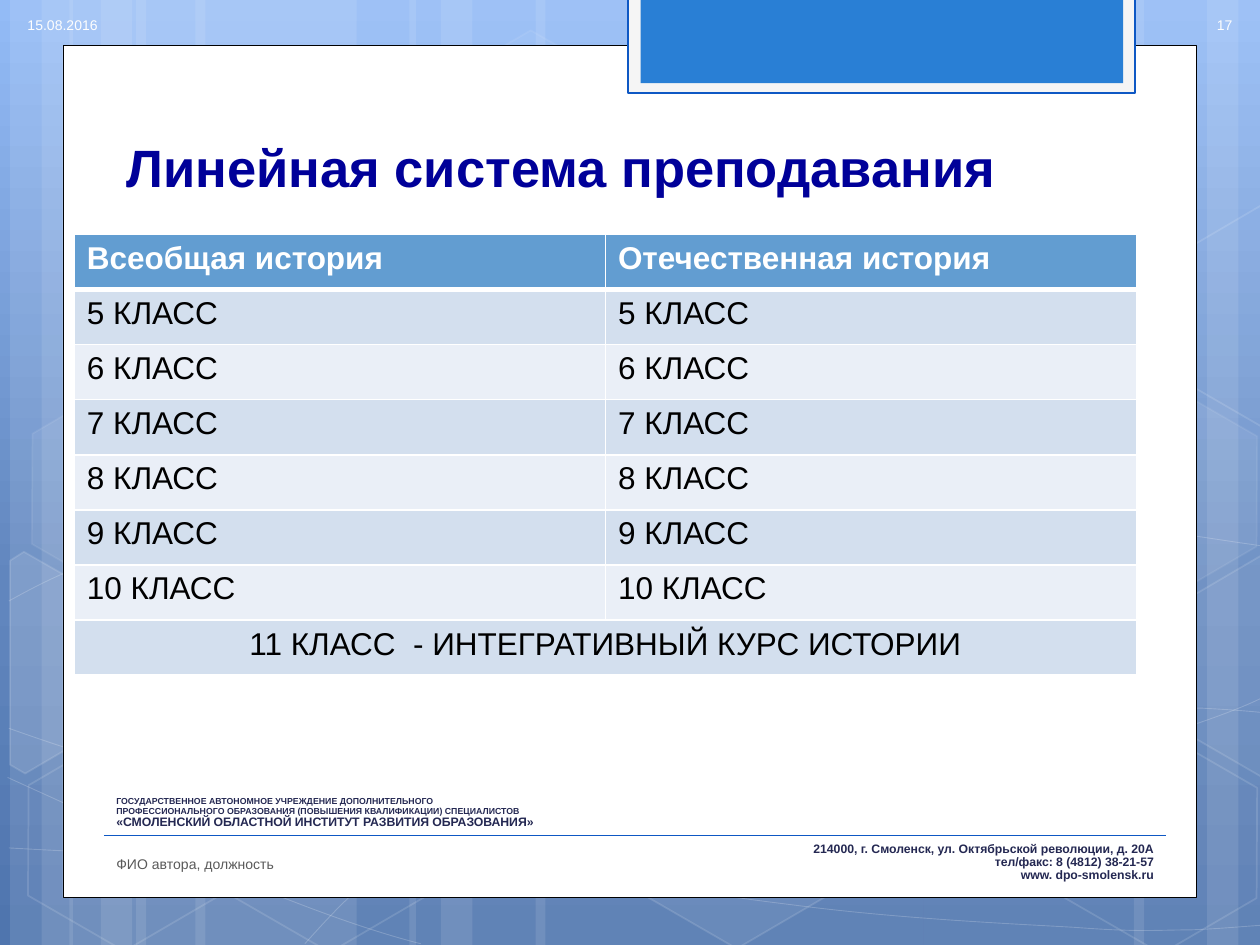
"""Build a slide with a two-column table of history courses on a blue hexagon backdrop."""
import copy

import lxml.etree
import pptx
import pptx.dml.color
import pptx.enum.dml
import pptx.enum.shapes
import pptx.enum.text
import pptx.oxml
import pptx.oxml.ns
import pptx.util

COLOURS = {
    "white": "FFFFFF", "black": "000000", "frame": "F5F5F5", "tab": "297FD5", "rule": "0E58C4",
    "title": "000099", "footer": "242852", "pale": "FEFEFE", "grey": "595959",
    "header": "629DD1", "odd": "D3DFEE", "even": "EAEFF7",
    "sky": "93BBF6", "mid": "6186BE", "deep": "4F75AE",
}
COLUMNS, ROWS = 100, 75
STRIPS = [(10.8, 17.5), (0.8, 5), (3.3, 8.3), (15.5, 17.5), (5.5, 5), (8, 8.3), (73.3, 17.5),
          (95.8, 5), (90, 8.3), (42.5, 30.8), (32.5, 5), (35, 8.3)]
CURVES = [
    [(0.7, 67.3), (6.1, 67.6), (11.5, 67.9), (19, 67.8), (26.5, 67.7), (35.8, 67.5), (45.8, 66.5),
     (55.8, 65.5), (70, 63.6), (79.2, 61.7), (88.3, 59.8), (97.7, 56.8), (100.7, 55.1)],
    [(0.7, 47.7), (3.6, 46.1), (6.5, 44.6), (12.1, 43.1), (17.8, 41.6), (25.9, 39.4), (34.7, 38.7),
     (43.6, 38), (54.4, 37.9), (65.4, 38.7), (76.4, 39.5), (94.7, 42.6), (100.7, 43.4)],
    [(0.6, 61.7), (12.7, 67.2), (24.7, 72.7), (33.4, 74.9)],
    [(0.7, 57.8), (3.8, 58.9), (7, 60), (12.8, 61.6), (18.6, 63.1), (27.3, 65.6), (35.7, 67.3),
     (44, 69), (54.5, 70.8), (62.8, 71.8), (71.1, 72.9), (80, 73.3), (85.3, 73.6),
     (90.5, 74), (91.9, 73.8), (94.5, 73.8), (97.1, 73.7), (98.9, 73.5), (100.7, 73.4)],
    [(24.2, 74.9), (26, 72.9), (27.8, 70.9), (30.2, 69.1), (32.6, 67.3), (36, 65.3), (38.8, 63.9),
     (41.6, 62.5), (43.3, 61.9), (47, 60.9), (50.6, 59.9), (57.3, 58.5), (60.8, 57.8),
     (64.4, 57.1), (64.9, 57.1), (68, 56.9), (71.1, 56.6), (76, 56.3), (79.4, 56.2),
     (82.9, 56.1), (88.6, 56.2), (88.6, 56.2), (90.8, 56.2), (93.1, 56.2), (95.3, 56.2),
     (97.1, 56.3), (98.8, 56.4), (100.6, 56.6)],
]
HEXAGONS = [(33.4, 3.6, 4, 8), (49.7, 58.9, 6, 12), (1.1, 59.1, 0, 12), (1.4, 31.2, 7, 8),
            (17.4, 59.2, 0, 12), (75.3, 45.3, 10, 12), (83.4, 59.3, 0, 12), (83.4, 31.4, 7, 8)]
CUT_HEXAGONS = [
    ([(0.8, 44.5), (1.9, 43.8), (9.6, 48.2), (9.5, 57), (2, 61.4), (0.8, 60.7)], 10),
    ([(92.6, 48.5), (100.1, 44.1), (100.9, 44.6), (100.9, 61.3), (100.2, 61.7), (92.6, 57.3)], 4),
    ([(92.6, 20.7), (100.1, 16.3), (101, 16.8), (100.9, 33.5), (100.2, 33.9), (92.6, 29.5)], 0),
]
FOOTER = [("ГОСУДАРСТВЕННОЕ АВТОНОМНОЕ УЧРЕЖДЕНИЕ ДОПОЛНИТЕЛЬНОГО", 5),
          ("ПРОФЕССИОНАЛЬНОГО ОБРАЗОВАНИЯ (ПОВЫШЕНИЯ КВАЛИФИКАЦИИ) СПЕЦИАЛИСТОВ", 5),
          ("«СМОЛЕНСКИЙ ОБЛАСТНОЙ ИНСТИТУТ РАЗВИТИЯ ОБРАЗОВАНИЯ»", 7)]
ADDRESS = ["214000, г. Смоленск, ул. Октябрьской революции, д. 20А",
           "тел/факс: 8 (4812) 38-21-57", "www. dpo-smolensk.ru"]
SHAPES = pptx.enum.shapes.MSO_SHAPE
ALIGN = pptx.enum.text.PP_ALIGN


def cells(*counts):
    """Turn counts of grid cells into lengths."""
    return [pptx.util.Inches(count / 10) for count in counts]


def colour(name):
    """Look up a colour by name."""
    return pptx.dml.color.RGBColor.from_string(COLOURS[name])


def make_translucent(fill_parent, opacity):
    """Give the solid colour under an element an opacity in percent."""
    tint = fill_parent.find(pptx.oxml.ns.qn("a:solidFill"))[0]
    tint.append(pptx.oxml.parse_xml(
        f'<a:alpha {pptx.oxml.ns.nsdecls("a")} val="{opacity * 1000}"/>'))


def paint(shape, fill=None, opacity=100, line=None, width=1, line_opacity=100):
    """Set the fill, outline and opacities of a shape."""
    shape.shadow.inherit = False
    properties = shape.element.spPr
    if fill and opacity:
        shape.fill.solid()
        shape.fill.fore_color.rgb = colour(fill)
        if opacity < 100:
            make_translucent(properties, opacity)
    else:
        shape.fill.background()
    if line:
        shape.line.color.rgb = colour(line)
        shape.line.width = pptx.util.Pt(width)
        if line_opacity < 100:
            make_translucent(properties.find(pptx.oxml.ns.qn("a:ln")), line_opacity)
    else:
        shape.line.fill.background()


def add_rectangle(page, area, **look):
    """Add a painted rectangle."""
    paint(page.shapes.add_shape(SHAPES.RECTANGLE, *cells(*area)), **look)


def add_outline(page, points, closed, **look):
    """Add a painted freeform through grid points and return it."""
    corners = [cells(*point) for point in points]
    builder = page.shapes.build_freeform(*corners[0], scale=1.0)
    builder.add_line_segments(corners[1:], close=closed)
    outline = builder.convert_to_shape()
    paint(outline, **look)
    return outline


def add_curve(page, controls):
    """Add a thin line whose segments are cubic curves, three control points each."""
    curve = add_outline(page, controls, False, line="white", width=0.5, line_opacity=20)
    segments = list(curve.element.iter(pptx.oxml.ns.qn("a:lnTo")))
    for first in range(0, len(segments), 3):
        bend = lxml.etree.Element(pptx.oxml.ns.qn("a:cubicBezTo"))
        segments[first].addprevious(bend)
        for segment in segments[first:first + 3]:
            bend.append(segment[0])
            segment.getparent().remove(segment)


def format_para(para, text, size, tone, bold=False, align=ALIGN.LEFT):
    """Write one paragraph in the deck font."""
    para.text = text
    para.alignment = align
    para.font.name = "Arial"
    para.font.size = pptx.util.Pt(size)
    para.font.bold = bold
    para.font.color.rgb = colour(tone)


def add_box(page, area):
    """Add a wrapping, vertically centred text box and return its text frame."""
    frame = page.shapes.add_textbox(*cells(*area)).text_frame
    frame.word_wrap = True
    frame.vertical_anchor = pptx.enum.text.MSO_ANCHOR.MIDDLE
    return frame


def set_background(page):
    """Paint the three-stop vertical gradient."""
    fill = page.background.fill
    fill.gradient()
    fill.gradient_angle = 270
    stop_list = page.element.find(".//" + pptx.oxml.ns.qn("a:gsLst"))
    stop_list.append(copy.deepcopy(stop_list[-1]))
    for stop, position, name in zip(fill.gradient_stops, (0, 0.62, 1), ("sky", "mid", "deep")):
        stop.position = position
        stop.color.rgb = colour(name)


def add_backdrop(page):
    """Add the strips, curves, hexagons and the white panel with its tab."""
    for left, width in STRIPS:
        add_rectangle(page, (left, 0, width, ROWS), fill="white", opacity=10)
    for controls in CURVES:
        add_curve(page, controls)
    for left, top, opacity, line_opacity in HEXAGONS:
        hexagon = page.shapes.add_shape(SHAPES.HEXAGON, *cells(left, top, 17.5, 15.2))
        hexagon.adjustments[0], hexagon.adjustments[1] = 0.285, 1.155
        hexagon.rotation = 30
        paint(hexagon, "white", opacity, "white", 1, line_opacity)
    for points, opacity in CUT_HEXAGONS:
        add_outline(page, points, True, fill="white", opacity=opacity, line="white", line_opacity=12)
    add_rectangle(page, (5, 3.6, 90, 67.65), fill="white", line="black", width=0.5)
    add_rectangle(page, (49.85, -0.2, 40.2, 7.6), fill="frame", line="rule", width=1.25)
    add_rectangle(page, (50.85, -0.2, 38.3, 6.8), fill="tab")


def add_footer(page):
    """Add the institute, its address and the rule between them."""
    frame = add_box(page, (8.25, 62.7, 84.3, 7.9))
    lines = [(*line, ALIGN.LEFT) for line in FOOTER] + [(text, 7, ALIGN.RIGHT) for text in ADDRESS]
    for index, (text, size, align) in enumerate(lines):
        para = frame.add_paragraph() if index else frame.paragraphs[0]
        format_para(para, text, size, "footer", True, align)
        para.line_spacing = 0.9
        if index == len(FOOTER):
            para.space_before = pptx.util.Pt(7.6)
    rule = page.shapes.add_connector(
        pptx.enum.shapes.MSO_CONNECTOR.STRAIGHT, *cells(8.25, 66.3, 92.5, 66.3))
    rule.element.remove(rule.element.find(pptx.oxml.ns.qn("p:style")))
    rule.line.fill.solid()
    rule.line.fill.fore_color.rgb = colour("rule")
    rule.line.width = pptx.util.Pt(1)
    rule.line.dash_style = pptx.enum.dml.MSO_LINE.SOLID
    rule.element.spPr.append(pptx.oxml.parse_xml(f'<a:effectLst {pptx.oxml.ns.nsdecls("a")}/>'))


def style_cell(cell, row):
    """Set the white borders and banded fill of a table cell."""
    widths = {"L": 1, "R": 1, "T": 3 if row == 1 else 1, "B": 3 if row == 0 else 1}
    properties = cell._tc.get_or_add_tcPr()
    for side, width in widths.items():
        properties.append(pptx.oxml.parse_xml(
            f'<a:ln{side} {pptx.oxml.ns.nsdecls("a")} w="{pptx.util.Pt(width)}"><a:solidFill>'
            f'<a:srgbClr val="{COLOURS["white"]}"/></a:solidFill></a:ln{side}>'))
    cell.fill.solid()
    cell.fill.fore_color.rgb = colour("header" if row == 0 else "odd" if row % 2 else "even")


def add_course_table(page):
    """Add the table of grades, with the last row merged."""
    rows = [("Всеобщая история", "Отечественная история")]
    rows += [(f"{grade} КЛАСС",) * 2 for grade in range(5, 11)]
    rows.append(("11 КЛАСС  - ИНТЕГРАТИВНЫЙ КУРС ИСТОРИИ",))
    table = page.shapes.add_table(len(rows), 2, *cells(5.9, 18.6, 84.3, 35)).table
    for row, texts in enumerate(rows):
        for column in range(2):
            style_cell(table.cell(row, column), row)
        for column, text in enumerate(texts):
            format_para(table.cell(row, column).text_frame.paragraphs[0], text, 18,
                        "black" if row else "white", row == 0,
                        ALIGN.CENTER if len(texts) == 1 else ALIGN.LEFT)
    table.cell(len(rows) - 1, 0).merge(table.cell(len(rows) - 1, 1))


def place_title(page, text):
    """Move the title placeholder to the front and format it."""
    title = page.shapes.title
    title.element.getparent().append(title.element)
    title.left, title.top, title.width, title.height = cells(9.05, 9.2, 84.3, 8.1)
    title.text_frame.vertical_anchor = pptx.enum.text.MSO_ANCHOR.MIDDLE
    format_para(title.text_frame.paragraphs[0], text, 30, "title", True)


def main():
    """Build and save the deck."""
    deck = pptx.Presentation()
    deck.slide_width, deck.slide_height = cells(COLUMNS, ROWS)
    page = deck.slides.add_slide(deck.slide_layouts[5])
    set_background(page)
    add_backdrop(page)
    add_footer(page)
    place_title(page, "Линейная система преподавания")
    add_course_table(page)
    for area, text, tone, align in [
            ((1.2, 0.6, 8.7, 2.8), "15.08.2016", "pale", ALIGN.LEFT),
            ((8.25, 67.3, 38.3, 2.5), "ФИО автора, должность", "grey", ALIGN.LEFT),
            ((94.1, 0.6, 4.7, 2.8), "17", "pale", ALIGN.RIGHT)]:
        format_para(add_box(page, area).paragraphs[0], text, 8, tone, align=align)
    deck.save("out.pptx")


if __name__ == "__main__":
    main()
